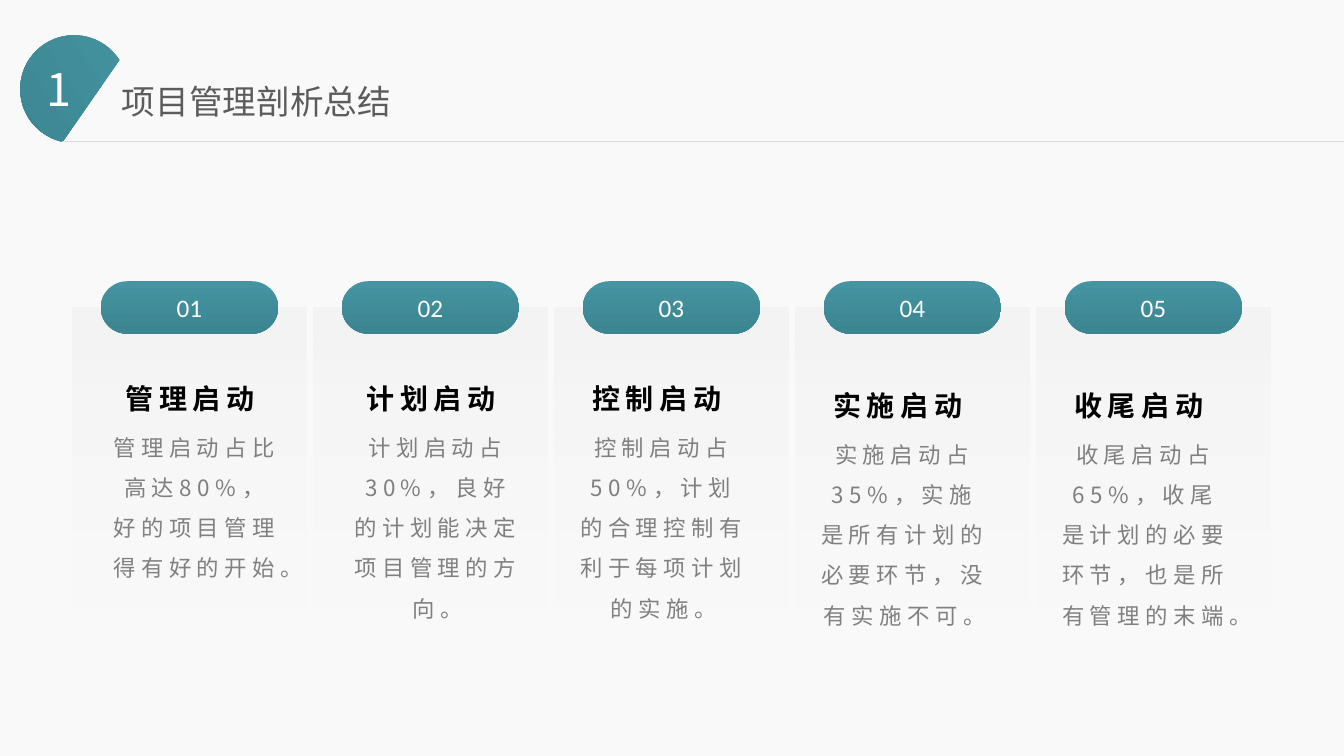
"""Build the project management summary slide with five stage cards."""
from lxml.etree import SubElement
from pptx import Presentation
from pptx.dml.color import RGBColor
from pptx.enum.shapes import MSO_CONNECTOR, MSO_SHAPE
from pptx.enum.text import MSO_ANCHOR, MSO_AUTO_SIZE, PP_ALIGN
from pptx.oxml.ns import qn
from pptx.util import Pt

PX = 9144
CJK = "Noto Sans CJK JP"
TEAL = ("4594A1", "3C8591")
STAGES = [
    ("管理启动", "管理启动占比高达80%，好的项目管理得有好的开始。", 21, 0, 167),
    ("计划启动", "计划启动占30%，良好的计划能决定项目管理的方向。", 21, 0, 167),
    ("控制启动", "控制启动占50%，计划的合理控制有利于每项计划的实施。", 6, 0, 208),
    ("实施启动", "实施启动占35%，实施是所有计划的必要环节，没有实施不可。", 6, 7, 208),
    ("收尾启动", "收尾启动占65%，收尾是计划的必要环节，也是所有管理的末端。", 6, 7, 208),
]

prs = Presentation()
prs.slide_width, prs.slide_height = 1333 * PX, 750 * PX
slide = prs.slides.add_slide(prs.slide_layouts[5])
slide.background.fill.solid()
slide.background.fill.fore_color.rgb = RGBColor.from_string("F9F9F9")


def write(text, size, color, box=None, target=None, font=CJK, bold=False,
          spacing=0, leading=None, align=PP_ALIGN.LEFT, anchor=MSO_ANCHOR.TOP):
    """Put formatted text in the target, or in a new text box."""
    holder = target or slide.shapes.add_textbox(0, 0, 0, 0)
    if box:
        holder.left, holder.top, holder.width, holder.height = [n * PX for n in box]
    frame = holder.text_frame
    frame.word_wrap = True
    frame.vertical_anchor = anchor
    frame.auto_size = MSO_AUTO_SIZE.SHAPE_TO_FIT_TEXT if box else MSO_AUTO_SIZE.NONE
    paragraph = frame.paragraphs[0]
    paragraph.alignment = align
    paragraph.line_spacing = leading
    run = paragraph.add_run()
    run.text = text
    run.font.size, run.font.bold, run.font.name = Pt(size), bold, font
    run.font.color.rgb = RGBColor.from_string(color)
    properties = run.font._element
    SubElement(properties, qn("a:ea")).set("typeface", font)
    if spacing:
        properties.set("spc", str(spacing * 100))


def add_gradient_shape(kind, box, colors, alphas=()):
    """Add a shape shaded from top to bottom."""
    shape = slide.shapes.add_shape(kind, *[n * PX for n in box])
    shape.shadow.inherit = False
    shape.line.fill.background()
    shape.fill.gradient()
    shape.fill.gradient_angle = 270
    for stop, color in zip(shape.fill.gradient_stops, colors):
        stop.color.rgb = RGBColor.from_string(color)
    for tone, alpha in zip(shape._element.spPr.iter(qn("a:srgbClr")), alphas):
        SubElement(tone, qn("a:alpha")).set("val", str(alpha * 1000))
    return shape


badge = add_gradient_shape(MSO_SHAPE.CHORD, (20, 35, 107, 107), TEAL)
badge.rotation = 57.3
header_rule = slide.shapes.add_connector(
    MSO_CONNECTOR.STRAIGHT, 62 * PX, 140 * PX, 1333 * PX, 140 * PX)
header_rule.line.color.rgb = RGBColor.from_string("D9D9D9")
header_rule.line.width = Pt(0.5)
SubElement(header_rule._element.spPr, qn("a:effectLst"))
write("项目管理剖析总结", 24, "5C5C5C", (111, 75, 419, 50), slide.shapes.title)
write("1", 32, "FFFFFF", (36, 56, 52, 64))

for index, (heading, detail, indent, drop, detail_height) in enumerate(STAGES):
    left = 72 + 239 * index
    add_gradient_shape(MSO_SHAPE.RECTANGLE, (left, 305, 232, 521),
                       ("F2F2F2", "FFFFFF"), (70, 0))
    number_pill = add_gradient_shape(
        MSO_SHAPE.ROUNDED_RECTANGLE, (left + 28, 279, 176, 52), TEAL)
    number_pill.adjustments[0] = 0.5
    write(f"{index + 1:02}", 18, "FFFFFF", target=number_pill, font="Calibri",
          align=PP_ALIGN.CENTER, anchor=MSO_ANCHOR.MIDDLE)
    write(heading, 20, "000000", (left + indent, 357 + drop, 191, 55),
          bold=True, spacing=4, leading=1.5, align=PP_ALIGN.CENTER)
    write(detail, 16, "808080", (left + indent + 7, 412 + drop, 191, detail_height),
          spacing=4, leading=1.5, align=PP_ALIGN.CENTER)

prs.save("out.pptx")
